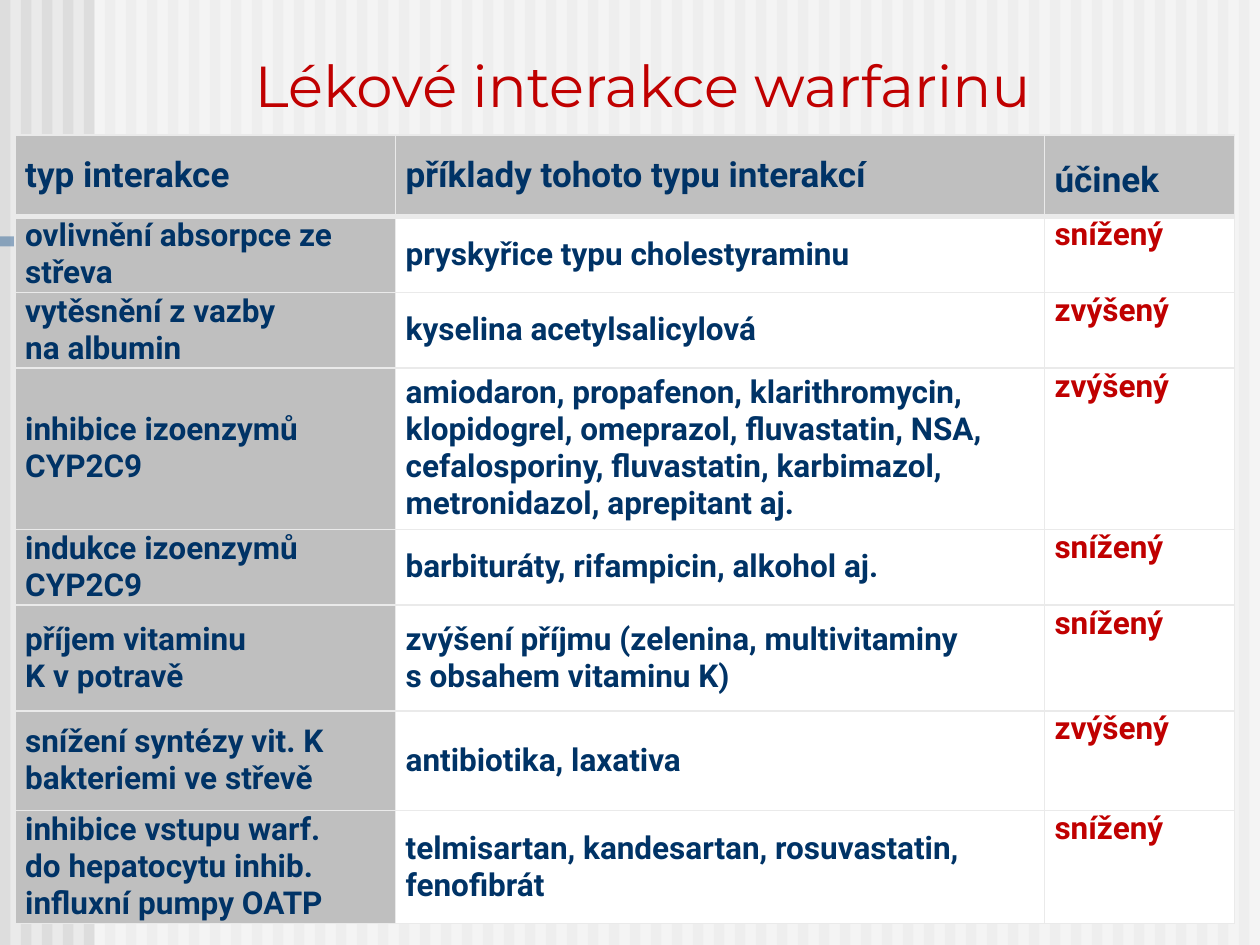
from dataclasses import dataclass

from lxml import etree
from pptx import Presentation
from pptx import util as u
from pptx.dml.color import RGBColor
from pptx.enum import shapes, text
from pptx.oxml.ns import qn

WIDTH, HEIGHT = 10, 7.5
STRIPE_COUNT = 60
STRIPE_STEP = WIDTH / STRIPE_COUNT
COLOURS = {
    "paper": "EAEAEA", "stripe": "DDDDDD", "white": "FFFFFF", "bar": "336699",
    "head": "BFBFBF", "navy": "003366", "red": "C00000",
}
COLUMN_WIDTHS = (3.02, 5.15, 1.51)
ROW_HEIGHTS = (0.65, 0.6, 0.6, 1.28, 0.6, 0.84, 0.79, 0.9)
HARD_SPACE = chr(160)  # typed as ~ in the wording below


@dataclass(frozen=True)
class Block:
    left: float
    top: float
    width: float
    height: float
    colour: str
    opacity: int = 100


@dataclass(frozen=True)
class Interaction:
    kind: str
    examples: str
    effect: str


HEADER = Interaction("typ interakce", "příklady tohoto typu interakcí", "účinek")
INTERACTIONS = (
    Interaction("ovlivnění absorpce ze střeva", "pryskyřice typu cholestyraminu", "snížený"),
    Interaction("vytěsnění z~vazby na~albumin", "kyselina acetylsalicylová", "zvýšený"),
    Interaction("inhibice izoenzymů CYP2C9",
                "amiodaron, propafenon, klarithromycin, klopidogrel, omeprazol, "
                "fluvastatin, NSA, cefalosporiny, fluvastatin, karbimazol, "
                "metronidazol, aprepitant aj.", "zvýšený"),
    Interaction("indukce izoenzymů CYP2C9", "barbituráty, rifampicin, alkohol aj.", "snížený"),
    Interaction("příjem vitaminu K~v~potravě",
                "zvýšení příjmu (zelenina, multivitaminy s~obsahem vitaminu K)", "snížený"),
    Interaction("snížení syntézy vit. K bakteriemi ve střevě", "antibiotika, laxativa", "zvýšený"),
    Interaction("inhibice vstupu warf. do~hepatocytu inhib. influxní pumpy OATP",
                "telmisartan, kandesartan, rosuvastatin, fenofibrát", "snížený"),
)


def rgb(name: str) -> RGBColor:
    return RGBColor.from_string(COLOURS[name])


def apply_format(target, values: dict) -> None:
    for name, value in values.items():
        setattr(target, name, value)


def write(para, wording: str, colour: str, font: dict) -> None:
    span = para.add_run()
    span.text = wording.replace("~", HARD_SPACE)
    apply_format(span.font, font)
    span.font.color.rgb = rgb(colour)


def draw_block(page, block: Block) -> None:
    box = page.shapes.add_shape(
        shapes.MSO_SHAPE.RECTANGLE, u.Inches(block.left), u.Inches(block.top),
        u.Inches(block.width), u.Inches(block.height))
    box.shadow.inherit = False
    box.line.fill.background()
    box.fill.solid()
    box.fill.fore_color.rgb = rgb(block.colour)
    if block.opacity < 100:
        colour = box.fill._xPr.find(qn("a:solidFill"))[0]
        etree.SubElement(colour, qn("a:alpha"), val=str(block.opacity * 1000))


def draw_borders(cell, row: int) -> None:
    heavy_side = {0: "lnB", 1: "lnT"}.get(row)
    properties = cell._tc.get_or_add_tcPr()
    for side in ("lnL", "lnR", "lnT", "lnB"):
        points = 3 if side == heavy_side else 1
        line = etree.SubElement(properties, qn(f"a:{side}"), w=str(u.Pt(points)))
        fill = etree.SubElement(line, qn("a:solidFill"))
        etree.SubElement(fill, qn("a:srgbClr"), val=COLOURS["paper"])


def draw_cell(cell, wording: str, row: int, column: int) -> None:
    is_header, is_effect = row == 0, column == 2
    apply_format(cell, {
        "margin_left": u.Inches(0.08), "margin_right": u.Inches(0.08),
        "margin_top": u.Inches(0.2 if is_header and is_effect else 0),
        "margin_bottom": 0,
        "vertical_anchor": text.MSO_ANCHOR.TOP if is_effect else text.MSO_ANCHOR.MIDDLE,
    })
    draw_borders(cell, row)
    cell.fill.solid()
    cell.fill.fore_color.rgb = rgb("head" if is_header or column == 0 else "white")
    write(cell.text_frame.paragraphs[0], wording,
          "red" if is_effect and not is_header else "navy",
          {"name": "Roboto", "size": u.Pt(20 if is_header else 18), "bold": True})


def draw_table(page) -> None:
    table = page.shapes.add_table(
        len(ROW_HEIGHTS), len(COLUMN_WIDTHS), u.Inches(0.12), u.Inches(1.07),
        u.Inches(sum(COLUMN_WIDTHS)), u.Inches(sum(ROW_HEIGHTS))).table
    apply_format(table, {"first_row": False, "horz_banding": False})
    for column, width in zip(table.columns, COLUMN_WIDTHS):
        column.width = u.Inches(width)
    for row, height in zip(table.rows, ROW_HEIGHTS):
        row.height = u.Inches(height)
    for row, entry in enumerate((HEADER, *INTERACTIONS)):
        for column, wording in enumerate((entry.kind, entry.examples, entry.effect)):
            draw_cell(table.cell(row, column), wording, row, column)


def draw_title(page) -> None:
    box = page.shapes.add_textbox(
        u.Inches(0.2), u.Inches(0.24), u.Inches(9.8), u.Inches(0.75))
    apply_format(box.text_frame, {
        "word_wrap": True, "vertical_anchor": text.MSO_ANCHOR.BOTTOM})
    para = box.text_frame.paragraphs[0]
    para.alignment = text.PP_ALIGN.CENTER
    write(para, "Lékové interakce warfarinu", "red",
          {"name": "Montserrat", "size": u.Pt(33)})


def main() -> None:
    deck = Presentation()
    apply_format(deck, {"slide_width": u.Inches(WIDTH), "slide_height": u.Inches(HEIGHT)})
    page = deck.slides.add_slide(deck.slide_layouts[6])
    page.background.fill.solid()
    page.background.fill.fore_color.rgb = rgb("paper")

    # Striped backdrop, veiled to the right of the margin
    for index in range(STRIPE_COUNT):
        draw_block(page, Block(index * STRIPE_STEP, 0, STRIPE_STEP / 2, HEIGHT, "stripe"))
    draw_block(page, Block(0.75, 0, WIDTH - 0.75, HEIGHT, "white", 50))
    draw_block(page, Block(0, HEIGHT / 4, 7.6, 0.08, "bar", 50))

    # Content
    draw_title(page)
    draw_table(page)
    deck.save("out.pptx")


if __name__ == "__main__":
    main()
